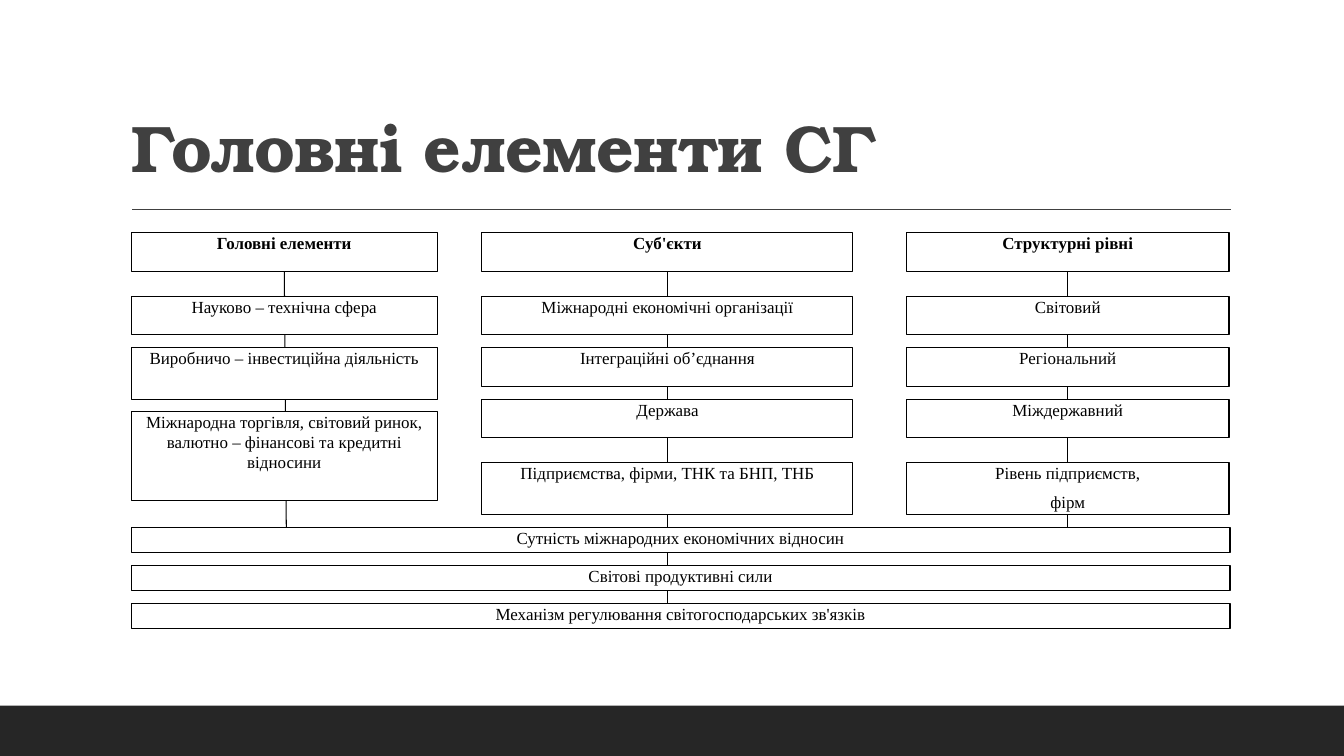
from dataclasses import dataclass

from lxml.etree import SubElement
from pptx import Presentation
from pptx.dml.color import RGBColor
from pptx.enum.shapes import MSO_CONNECTOR, MSO_SHAPE
from pptx.enum.text import MSO_ANCHOR, MSO_AUTO_SIZE, PP_ALIGN
from pptx.oxml.ns import qn
from pptx.util import Inches, Pt


@dataclass(frozen=True)
class Theme:
    title_font: str = "TeX Gyre Bonum"
    body_font: str = "Times New Roman"
    title_size: float = 47
    body_size: float = 12.1
    ink: RGBColor = RGBColor(0, 0, 0)
    paper: RGBColor = RGBColor(255, 255, 255)
    heading: RGBColor = RGBColor(0x40, 0x40, 0x40)
    band: RGBColor = RGBColor(0x26, 0x26, 0x26)


THEME = Theme()
BOTTOM_SIDE = 2
HEADER_TOP, HEADER_HEIGHT = 2.31, 0.38
BARS_LEFT, BARS_TOP, BARS_STEP = 1.3, 5.23, 0.38
BARS_WIDTH, BAR_HEIGHT = 10.9, 0.25

# Each column: left, width, header, foot of its line (x, y), boxes (top, height, paragraphs)
COLUMNS = [
    (1.3, 3.04, "Головні елементи", (2.84, 5.27), [
        (2.94, 0.38, ["Науково – технічна сфера"]),
        (3.45, 0.51, ["Виробничо – інвестиційна діяльність"]),
        (4.08, 0.89, ["Міжнародна торгівля, світовий ринок, "
                      "валютно – фінансові та кредитні відносини"]),
    ]),
    (4.78, 3.68, "Суб'єкти", (6.62, 6.24), [
        (2.94, 0.38, ["Міжнародні економічні організації"]),
        (3.45, 0.38, ["Інтеграційні об’єднання"]),
        (3.96, 0.38, ["Держава"]),
        (4.59, 0.51, ["Підприємства, фірми, ТНК та БНП, ТНБ"]),
    ]),
    (8.99, 3.2, "Структурні рівні", (10.59, 5.23), [
        (2.94, 0.38, ["Світовий"]),
        (3.45, 0.38, ["Регіональний"]),
        (3.96, 0.38, ["Міждержавний"]),
        (4.59, 0.51, ["Рівень підприємств,", "фірм"]),
    ]),
]
BARS = [
    "Сутність міжнародних економічних відносин",
    "Світові продуктивні сили",
    "Механізм регулювання світогосподарських зв'язків",
]


def add_span(para, text, font, size, color, bold=False):
    span = para.add_run()
    span.text = text
    span.font.name = font
    span.font.size = Pt(size)
    span.font.color.rgb = color
    span.font.bold = bold
    return span


def add_rectangle(page, left, top, width, height, fill):
    box = page.shapes.add_shape(MSO_SHAPE.RECTANGLE, Inches(left), Inches(top),
                                Inches(width), Inches(height))
    box.shadow.inherit = False
    box.fill.solid()
    box.fill.fore_color.rgb = fill
    return box


def add_box(page, left, top, width, height, texts, bold=False):
    box = add_rectangle(page, left, top, width, height, THEME.paper)
    box.line.color.rgb = THEME.ink
    box.line.width = Pt(0.75)
    frame = box.text_frame
    frame.word_wrap = True
    frame.vertical_anchor = MSO_ANCHOR.TOP
    frame.margin_left = frame.margin_top = frame.margin_right = frame.margin_bottom = 0
    for index, text in enumerate(texts):
        para = frame.add_paragraph() if index else frame.paragraphs[0]
        para.alignment = PP_ALIGN.CENTER
        para.space_after = Pt(6)
        add_span(para, text, THEME.body_font, THEME.body_size, THEME.ink, bold)
    return box


def add_line(page, start, end, color, width):
    line = page.shapes.add_connector(MSO_CONNECTOR.STRAIGHT,
                                     *(Inches(value) for value in (*start, *end)))
    line.line.color.rgb = color
    line.line.width = Pt(width)
    SubElement(line._element.spPr, qn("a:effectLst"))
    return line


def add_title(page, text):
    title = page.shapes.title
    title.left, title.top = Inches(1.2), Inches(0.31)
    title.width, title.height = Inches(11), Inches(1.59)
    frame = title.text_frame
    frame.word_wrap = True
    frame.auto_size = MSO_AUTO_SIZE.NONE
    frame.vertical_anchor = MSO_ANCHOR.BOTTOM
    para = frame.paragraphs[0]
    para.alignment = PP_ALIGN.LEFT
    para.line_spacing = 0.9
    span = add_span(para, text, THEME.title_font, THEME.title_size, THEME.heading, bold=True)
    span.font._element.set("spc", "-50")


def add_column(page, left, width, header, foot, boxes):
    """Draw the header, its line down to the foot, and the boxes over that line."""
    head = add_box(page, left, HEADER_TOP, width, HEADER_HEIGHT, [header], bold=True)
    start = (left + width / 2, HEADER_TOP + HEADER_HEIGHT)
    line = add_line(page, start, foot, THEME.ink, 0.75)
    line.begin_connect(head, BOTTOM_SIDE)
    for top, height, texts in boxes:
        add_box(page, left, top, width, height, texts)


def main():
    deck = Presentation()
    deck.slide_width, deck.slide_height = Inches(13.33), Inches(7.5)
    page = deck.slides.add_slide(deck.slide_layouts[5])
    band = add_rectangle(page, 0, 7, 13.33, 0.5, THEME.band)
    band.line.fill.background()
    add_line(page, (1.31, 2.08), (12.21, 2.08), THEME.heading, 1)
    add_title(page, "Головні елементи СГ")
    for column in COLUMNS:
        add_column(page, *column)
    for index, text in enumerate(BARS):
        add_box(page, BARS_LEFT, BARS_TOP + index * BARS_STEP, BARS_WIDTH, BAR_HEIGHT, [text])
    deck.save("out.pptx")


if __name__ == "__main__":
    main()
